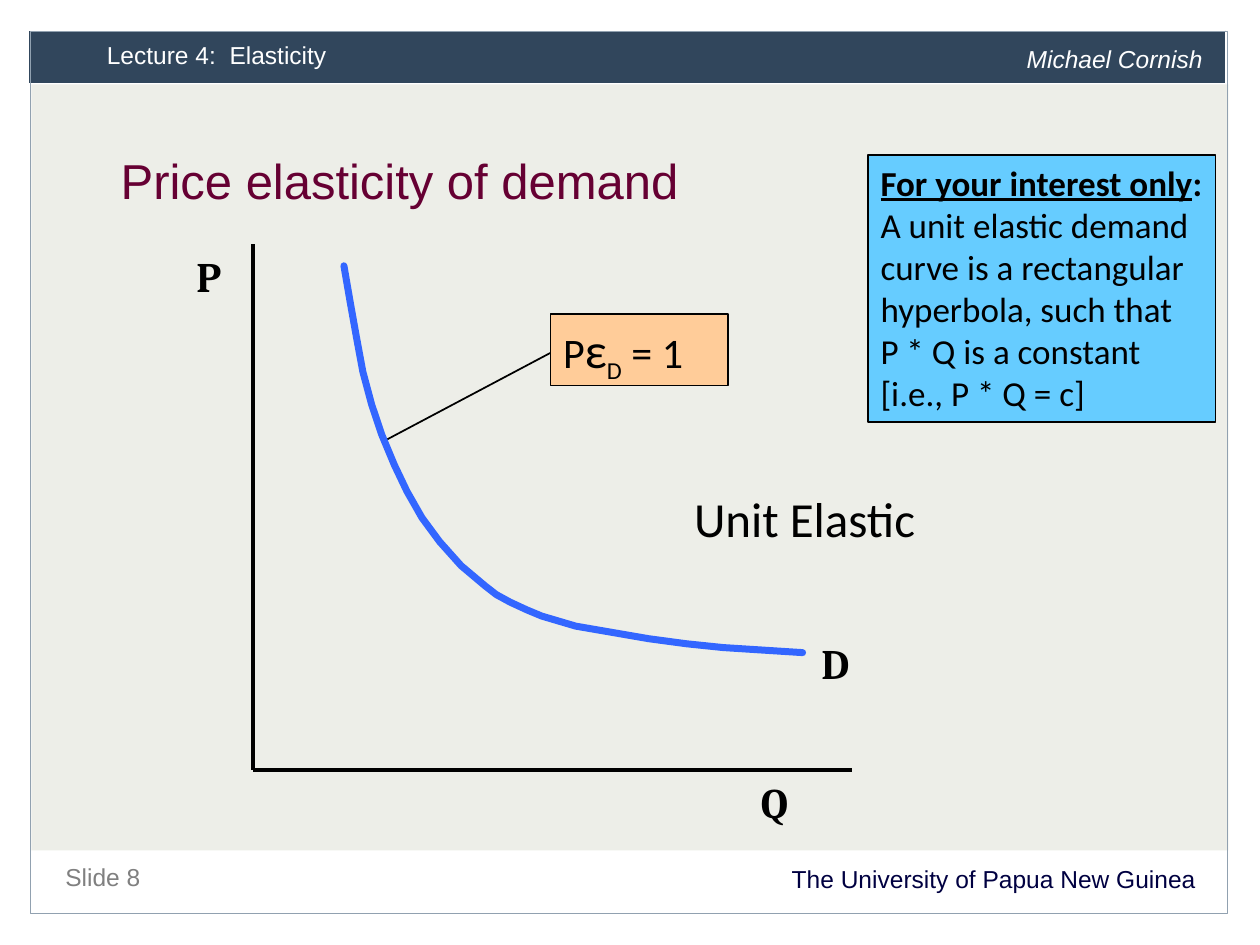
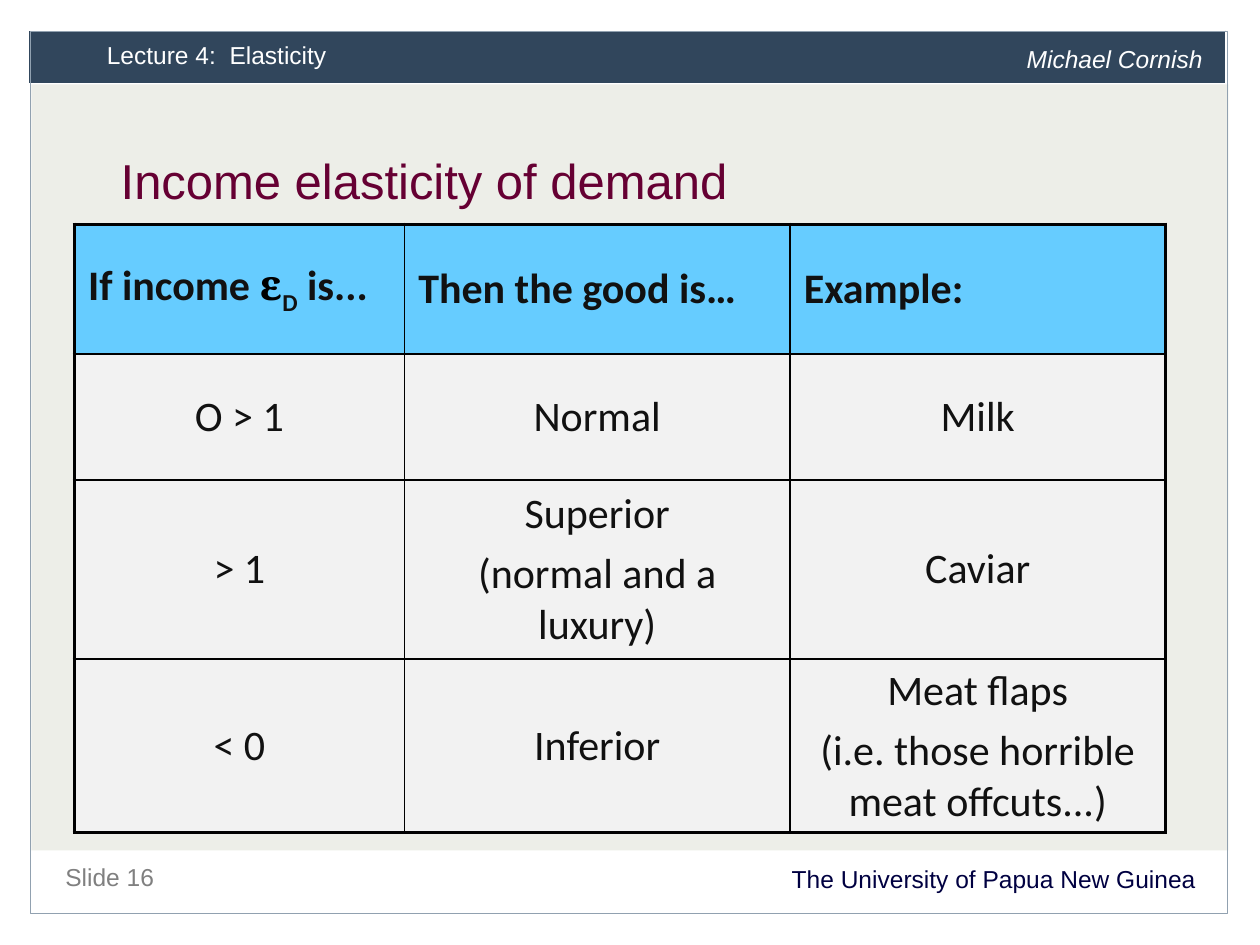
from lxml.etree import SubElement
from pptx import Presentation
from pptx.dml.color import RGBColor
from pptx.enum.shapes import MSO_CONNECTOR, MSO_SHAPE
from pptx.enum.text import MSO_ANCHOR, PP_ALIGN
from pptx.oxml.ns import qn
from pptx.util import Inches, Pt

COLS, ROWS = 100, 75
BLACK, WHITE = "000000", "FFFFFF"
NAVY, SAND, STEEL = "31465C", "EDEEE8", "91A1B0"
INK, GRAY, PLUM = "000041", "808080", "660033"
SKY, PEACH, BLUE = "66CCFF", "FFCC99", "3366FF"
PALE, COAL = "F2F2F2", "111111"


def color(code):
    return RGBColor.from_string(code)


def put(frame, text, size=14, face="Arial", tint=BLACK, bold=False, slant=False,
        align=PP_ALIGN.LEFT, lead=None, gap=0):
    lines = [text] if isinstance(text, str) else text
    for index, line in enumerate(lines):
        para = frame.paragraphs[0] if index == 0 else frame.add_paragraph()
        para.alignment = align
        if lead:
            para.line_spacing = Pt(lead)
        if index and gap:
            para.space_before = Pt(gap)
        for words, style in [(line, {})] if isinstance(line, str) else line:
            run = para.add_run()
            run.text = words
            font = run.font
            font.size = Pt(style.get("size", size))
            font.name = style.get("face", face)
            font.color.rgb = color(style.get("tint", tint))
            font.bold = style.get("bold", bold)
            font.italic = slant
            font.underline = style.get("under", False)
            if style.get("sub"):
                font._element.set("baseline", "-25000")


class Deck:
    def __init__(self):
        self.show = Presentation()
        self.show.slide_width = Inches(10)
        self.show.slide_height = Inches(7.5)
        self.slide = None

    def spot(self, x, y):
        return (round(x * self.show.slide_width / COLS),
                round(y * self.show.slide_height / ROWS))

    def area(self, x, y, wide, high):
        return *self.spot(x, y), *self.spot(wide, high)

    def stroke(self, item, tint, width):
        item.line.color.rgb = color(tint)
        item.line.width = Pt(width)

    def block(self, place, fill=None, edge=None, text=None, **style):
        shape = self.slide.shapes.add_shape(MSO_SHAPE.RECTANGLE, *self.area(*place))
        shape.shadow.inherit = False
        if fill:
            shape.fill.solid()
            shape.fill.fore_color.rgb = color(fill)
        else:
            shape.fill.background()
        if edge:
            self.stroke(shape, *edge)
        else:
            shape.line.fill.background()
        if text:
            shape.text_frame.word_wrap = True
            shape.text_frame.vertical_anchor = MSO_ANCHOR.TOP
            put(shape.text_frame, text, **style)

    def label(self, place, text, wrap=True, **style):
        box = self.slide.shapes.add_textbox(*self.area(*place))
        box.text_frame.word_wrap = wrap
        put(box.text_frame, text, **style)

    def line(self, start, end, width):
        link = self.slide.shapes.add_connector(
            MSO_CONNECTOR.STRAIGHT, *self.spot(*start), *self.spot(*end))
        self.stroke(link, BLACK, width)
        SubElement(link._element.spPr, qn("a:effectLst"))

    def curve(self, points, tint, width):
        first, *rest = [self.spot(*point) for point in points]
        path = self.slide.shapes.build_freeform(*first)
        path.add_line_segments(rest, close=False)
        shape = path.convert_to_shape()
        shape.shadow.inherit = False
        shape.fill.background()
        self.stroke(shape, tint, width)
        shape._element.spPr.find(qn("a:ln")).set("cap", "rnd")

    def border(self, cell, edges):
        props = cell._tc.get_or_add_tcPr()
        for side in "LRTB":
            width = 2.25 if side in edges else 1
            line = SubElement(props, qn("a:ln" + side), w=str(Pt(width)))
            fill = SubElement(line, qn("a:solidFill"))
            SubElement(fill, qn("a:srgbClr"), val=BLACK)

    def table(self, corner, wides, highs, rows):
        grid = self.slide.shapes.add_table(
            len(highs), len(wides), *self.area(*corner, sum(wides), sum(highs))).table
        grid.first_row = grid.horz_banding = False
        for index, wide in enumerate(wides):
            grid.columns[index].width = self.spot(wide, 0)[0]
        for index, high in enumerate(highs):
            grid.rows[index].height = self.spot(0, high)[1]
        for r, row in enumerate(rows):
            for c, text in enumerate(row):
                cell = grid.cell(r, c)
                sides = (("L", c == 0), ("R", c == len(wides) - 1),
                         ("T", r == 0), ("B", r == len(highs) - 1))
                self.border(cell, [side for side, outer in sides if outer])
                cell.fill.solid()
                cell.fill.fore_color.rgb = color(PALE if r else SKY)
                cell.vertical_anchor = MSO_ANCHOR.MIDDLE
                cell.margin_left = cell.margin_right = Inches(0.11)
                put(cell.text_frame, text, size=24, face="Calibri", tint=COAL,
                    bold=r == 0, gap=5,
                    align=PP_ALIGN.CENTER if r else PP_ALIGN.LEFT)

    def page(self, number, title):
        self.slide = self.show.slides.add_slide(self.show.slide_layouts[6])
        self.block((2.5, 6.7, 95, 60.8), SAND)
        self.block((2.3, 2.4, 95, 4.2), NAVY, (WHITE, 0.5))
        self.label((4.2, 68.3, 91.7, 3.2), "The University of Papua New Guinea",
                   tint=INK, align=PP_ALIGN.RIGHT, lead=15)
        self.label((4.2, 67.5, 43.3, 3.4), f"Slide {number}", tint=GRAY, lead=20)
        self.label((7.5, 2.5, 61.3, 3.7), "Lecture 4:  Elasticity", tint=WHITE, lead=18)
        self.block((2.4, 2.5, 95, 70), edge=(STEEL, 0.75))
        self.label((80.5, 2.8, 16.4, 3.7), "Michael Cornish",
                   tint=WHITE, slant=True, lead=18)
        self.label((8.6, 12.5, 81.3, 7.5), title, size=28, tint=PLUM, lead=26)


def demand(deck):
    deck.page(8, "Price elasticity of demand")
    for name, x, y, wide in (("P", 14.6, 19.4, 3.7), ("Q", 59.4, 61.1, 4.2),
                             ("D", 64.2, 50.1, 4)):
        deck.label((x, y, wide, 4.3), name, wrap=False, size=24, face="Cambria", bold=True)
    deck.line((43.7, 28), (30.3, 35.1), 1)
    deck.block((43.7, 24.9, 14.1, 5.7), PEACH, (BLACK, 1),
               [[("P", {}), ("ε", {"size": 28}), ("D", {"sub": True}), (" = 1", {})]],
               size=24, face="Calibri")
    deck.label((54, 38.3, 19.7, 5.7), "Unit Elastic", wrap=False,
               size=28, face="Calibri", align=PP_ALIGN.CENTER)
    origin = (20.1, 61.1)
    deck.line((20.1, 19.4), origin, 2)
    deck.line(origin, (67.6, 61.1), 2)
    deck.curve([(27.3, 21.1), (27.8, 24), (28.3, 26.8), (28.8, 29.5), (29.5, 32.1),
                (30.3, 34.5), (31.3, 36.9), (32.3, 39), (33.5, 41.1), (34.9, 43),
                (36.6, 44.9), (38.5, 46.5), (39.4, 47.2), (40.5, 47.8), (41.8, 48.4),
                (43, 48.9), (45.7, 49.7), (48.6, 50.2), (51.5, 50.7), (54.5, 51.1),
                (57.4, 51.4), (63.7, 51.8)], BLUE, 4)
    deck.block((68.9, 12.3, 27.6, 21.2), SKY, (BLACK, 0.75), [
        [("For your interest only", {"bold": True, "under": True}), (":", {"bold": True})],
        "A unit elastic demand curve is a rectangular hyperbola, such that",
        "P * Q is a constant",
        "[i.e., P * Q = c]"], size=20, face="Calibri")


def income(deck):
    deck.page(16, "Income elasticity of demand")
    head = [[("If income ", {}), ("ε", {"face": "Cambria", "tint": BLACK}),
             ("D", {"sub": True}), (" is...", {})]]
    deck.table((5.9, 17.8), (26.2, 30.6, 29.8), (10.3, 10, 14.2, 13.8), [
        (head, "Then the good is…", "Example:"),
        ("O > 1", "Normal", "Milk"),
        ("> 1", ["Superior", "(normal and a luxury)"], "Caviar"),
        ("< 0", "Inferior", ["Meat flaps", "(i.e. those horrible meat offcuts...)"])])


def main():
    deck = Deck()
    demand(deck)
    income(deck)
    deck.show.save("out.pptx")


if __name__ == "__main__":
    main()
